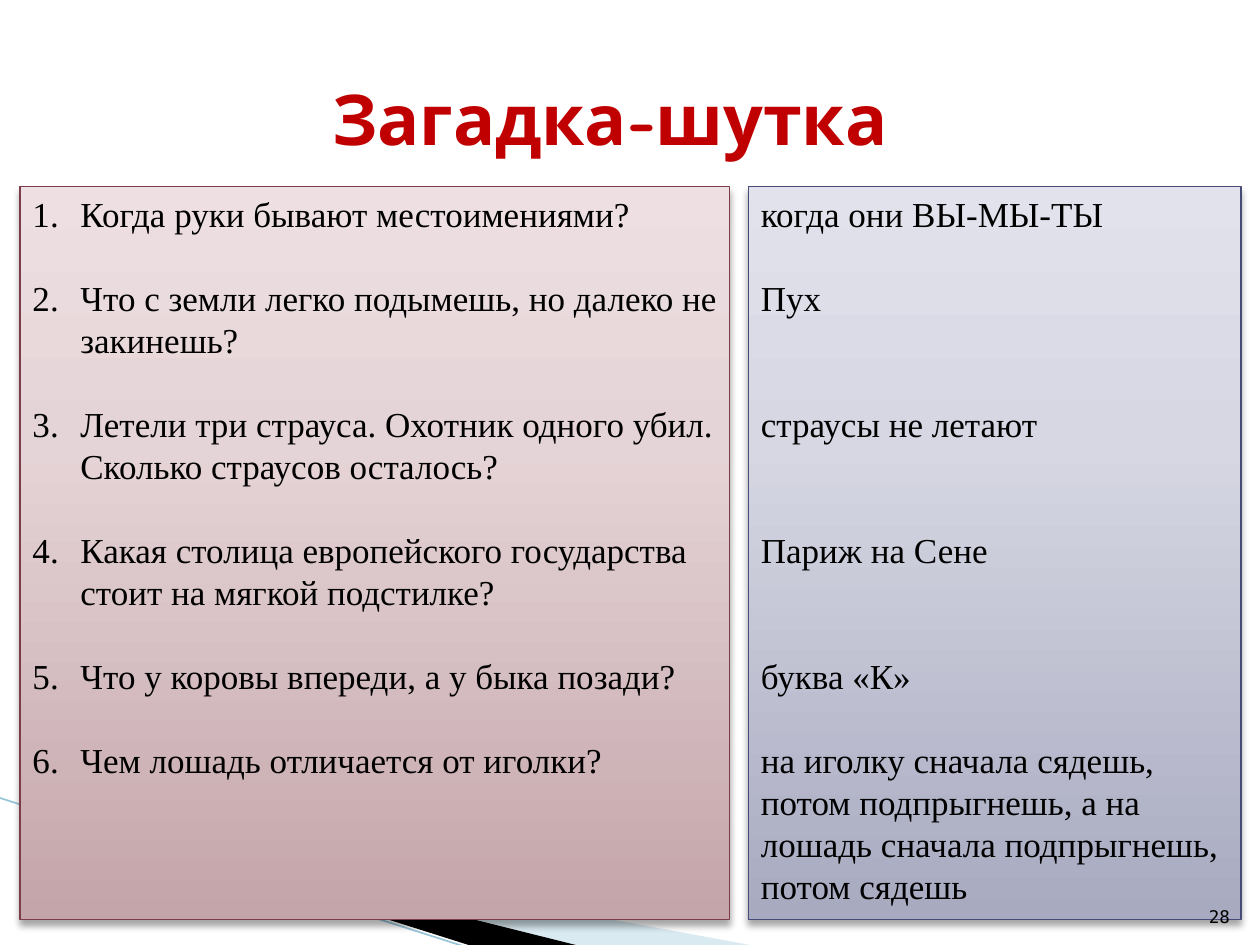
from pptx import Presentation
from pptx.dml.color import RGBColor
from pptx.enum.shapes import MSO_CONNECTOR, MSO_SHAPE
from pptx.enum.text import MSO_ANCHOR, PP_ALIGN
from pptx.oxml import parse_xml
from pptx.oxml.ns import nsdecls, qn
from pptx.util import Inches, Pt
from copy import deepcopy

COLORS = {
    "title": "C00000", "text": "000000", "wedge": "000000",
    "pale_wedge": "A0CBDC", "edge": "97C5D8",
    "question_line": "7D3C4A", "answer_line": "474B78",
}
QUESTION_SHADES = ["C4A5A9", "E5D4D7", "EEE0E2"]
ANSWER_SHADES = ["A8AAC0", "D6D7E3", "E2E2EC"]
SHADE_STOPS = [0, 0.65, 1]
PANEL_TOP, PANEL_HEIGHT = 1.48, 5.82
LINE_PITCH = 24
INDENT = 0.38

RIDDLES = [
    ("Когда руки бывают местоимениями?", "когда они ВЫ-МЫ-ТЫ", 0),
    ("Что с земли легко подымешь, но далеко не закинешь?", "Пух", 1),
    ("Летели три страуса. Охотник одного убил. Сколько страусов осталось?",
     "страусы не летают", 2),
    ("Какая столица европейского государства стоит на мягкой подстилке?",
     "Париж на Сене", 2),
    ("Что у коровы впереди, а у быка позади?", "буква «К»", 2),
    ("Чем лошадь отличается от иголки?",
     "на иголку сначала сядешь, потом подпрыгнешь, а на лошадь сначала "
     "подпрыгнешь, потом сядешь", 1),
]


def rgb(name):
    return RGBColor.from_string(COLORS[name])


def add_run(paragraph, text, font, size, color, bold=False):
    run = paragraph.add_run()
    run.text = text
    run.font.name = font
    run.font.size = Pt(size)
    run.font.bold = bold
    run.font.color.rgb = rgb(color)


def add_wedge(slide, points, color, opacity=100):
    corners = [(Inches(x), Inches(y)) for x, y in points]
    builder = slide.shapes.build_freeform(*corners[0], scale=1.0)
    builder.add_line_segments(corners[1:], close=True)
    wedge = builder.convert_to_shape()
    wedge.shadow.inherit = False
    wedge.line.fill.background()
    wedge.fill.solid()
    wedge.fill.fore_color.rgb = rgb(color)
    if opacity < 100:
        tone = wedge._element.spPr.find(".//" + qn("a:srgbClr"))
        tone.append(parse_xml(
            f'<a:alpha {nsdecls("a")} val="{opacity * 1000}"/>'))


def add_edge(slide, start, end):
    edge = slide.shapes.add_connector(
        MSO_CONNECTOR.STRAIGHT, *map(Inches, start + end))
    edge.line.color.rgb = rgb("edge")
    edge.line.width = Pt(0.95)
    edge._element.spPr.append(parse_xml(f'<a:effectLst {nsdecls("a")}/>'))


def add_label(slide, box, text, font, size, color, align,
              anchor=MSO_ANCHOR.TOP, bold=False):
    frame = slide.shapes.add_textbox(*map(Inches, box)).text_frame
    frame.word_wrap = True
    frame.vertical_anchor = anchor
    paragraph = frame.paragraphs[0]
    paragraph.alignment = align
    add_run(paragraph, text, font, size, color, bold)


def shade(panel, shades):
    panel.fill.gradient()
    panel.fill.gradient_angle = 90
    stop_list = panel._element.spPr.find(".//" + qn("a:gsLst"))
    stop_list.append(deepcopy(stop_list[-1]))
    for stop, position, tone in zip(
            panel.fill.gradient_stops, SHADE_STOPS, shades):
        stop.position = position
        stop.color.rgb = RGBColor.from_string(tone)


def drop_shadow(panel):
    panel.shadow.inherit = False
    panel._element.spPr.find(qn("a:effectLst")).append(parse_xml(
        f'<a:outerShdw {nsdecls("a")} blurRad="{Pt(4)}" dist="{Pt(3)}" '
        'dir="5400000" rotWithShape="0"><a:srgbClr val="000000">'
        '<a:alpha val="35000"/></a:srgbClr></a:outerShdw>'))


def number(paragraph):
    properties = paragraph._p.get_or_add_pPr()
    properties.set("marL", str(Inches(INDENT)))
    properties.set("indent", str(-Inches(INDENT)))
    properties.append(parse_xml(
        f'<a:buFont {nsdecls("a")} typeface="+mj-lt"/>'))
    properties.append(parse_xml(
        f'<a:buAutoNum {nsdecls("a")} type="arabicPeriod"/>'))


def add_panel(slide, left, width, shades, line, entries, numbered=False):
    panel = slide.shapes.add_shape(
        MSO_SHAPE.RECTANGLE,
        *map(Inches, (left, PANEL_TOP, width, PANEL_HEIGHT)))
    shade(panel, shades)
    drop_shadow(panel)
    panel.line.color.rgb = rgb(line)
    panel.line.width = Pt(0.75)
    frame = panel.text_frame
    frame.word_wrap = True
    frame.vertical_anchor = MSO_ANCHOR.TOP
    for index, (text, gap) in enumerate(entries):
        paragraph = frame.add_paragraph() if index else frame.paragraphs[0]
        paragraph.alignment = PP_ALIGN.LEFT
        paragraph.line_spacing = Pt(LINE_PITCH)
        if gap:
            paragraph.space_before = Pt(gap * LINE_PITCH)
        if numbered:
            number(paragraph)
        add_run(paragraph, text, "Times New Roman", 20, "text")


def main():
    deck = Presentation()
    deck.slide_width, deck.slide_height = Inches(10), Inches(7.5)
    slide = deck.slides.add_slide(deck.slide_layouts[6])

    add_wedge(slide, [(0.55, 6.5), (5.95, 7.5), (4.56, 7.5)],
              "pale_wedge", 40)
    add_wedge(slide, [(0.53, 6.49), (4.57, 7.5), (3.72, 7.5)], "wedge")
    add_edge(slide, (-0.01, 6.33), (3.71, 7.52))

    add_label(slide, (1.87, 0.55, 5.94, 0.77), "Загадка-шутка",
              "Comic Neue", 40, "title", PP_ALIGN.CENTER, bold=True)
    questions = [(question, min(index, 1))
                 for index, (question, _, _) in enumerate(RIDDLES)]
    answers = [(answer, gap) for _, answer, gap in RIDDLES]
    add_panel(slide, 0.16, 5.63, QUESTION_SHADES, "question_line",
              questions, numbered=True)
    add_panel(slide, 5.94, 3.91, ANSWER_SHADES, "answer_line", answers)
    add_label(slide, (9.46, 7.01, 0.4, 0.4), "28", "DejaVu Sans Mono", 10,
              "text", PP_ALIGN.RIGHT, MSO_ANCHOR.BOTTOM)

    deck.save("out.pptx")


if __name__ == "__main__":
    main()
